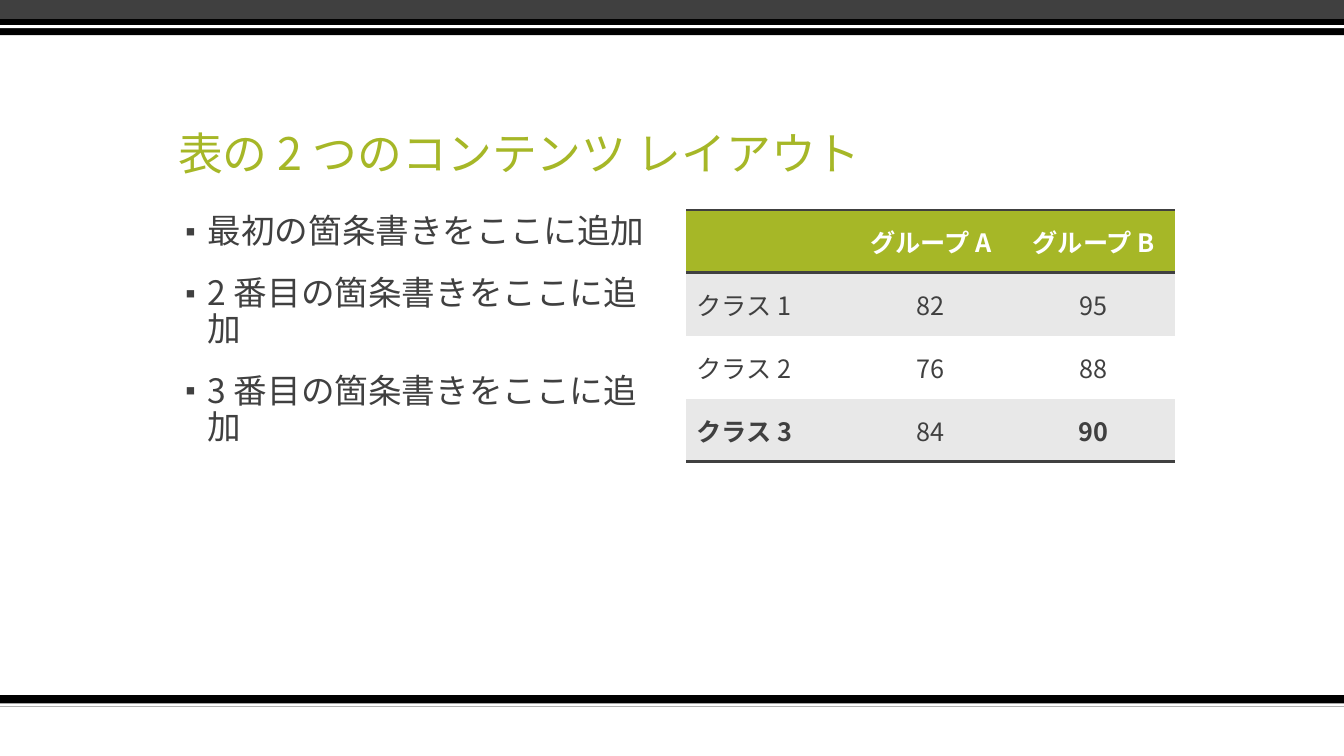
import dataclasses

import lxml.etree
import pptx
import pptx.dml.color
import pptx.enum.lang
import pptx.enum.shapes
import pptx.enum.text
import pptx.oxml.ns
import pptx.util

Pt = pptx.util.Pt
qn = pptx.oxml.ns.qn
ALIGN = pptx.enum.text.PP_ALIGN
ANCHOR = pptx.enum.text.MSO_ANCHOR

FONT = "Noto Sans CJK JP"
GREEN, DARK, BLACK, WHITE, BAND = "A6B727", "404040", "000000", "FFFFFF", "E8E8E8"
NO_STYLE = "{2D5ABB26-0587-4C30-8999-92F81FD0307C}"
SLIDE_W, SLIDE_H = 960, 540
CONTENT_TOP, CONTENT_W = 149.8, 349.2
ROW_H = 45


@dataclasses.dataclass
class Bar:
    top: float
    height: float
    color: str


@dataclasses.dataclass
class Row:
    cells: tuple[str, ...]
    fill: str
    color: str = DARK
    bold: tuple[int, ...] = ()
    edges: tuple[str, ...] = ()


BARS = [
    Bar(496.6, 7.9, BLACK),
    Bar(502.4, 2.1, WHITE),
    Bar(0, 13.6, DARK),
    Bar(13.6, 11.5, BLACK),
    Bar(18, 2.1, WHITE),
]
BULLETS = [
    "最初の箇条書きをここに追加",
    "2 番目の箇条書きをここに追加",
    "3 番目の箇条書きをここに追加",
]
ROWS = [
    Row(("", "グループ A", "グループ B"), GREEN, WHITE, (0, 1, 2), ("lnT", "lnB")),
    Row(("クラス 1", "82", "95"), BAND),
    Row(("クラス 2", "76", "88"), WHITE),
    Row(("クラス 3", "84", "90"), BAND, DARK, (0, 2), ("lnB",)),
]


def rgb(color: str) -> pptx.dml.color.RGBColor:
    return pptx.dml.color.RGBColor.from_string(color)


def paint(fill, color: str) -> None:
    fill.solid()
    fill.fore_color.rgb = rgb(color)


def add_child(parent, tag: str, **attrs: str):
    return lxml.etree.SubElement(parent, qn(tag), attrs)


def write(p, text: str, *, size: float, color: str, bold: bool = False,
          align=ALIGN.LEFT) -> None:
    p.alignment = align
    r = p.add_run()
    r.text = text
    r.font.size = Pt(size)
    r.font.bold = bold
    r.font.name = FONT
    r.font.language_id = pptx.enum.lang.MSO_LANGUAGE_ID.JAPANESE
    paint(r.font.fill, color)
    add_child(r.font._element, "a:ea", typeface=FONT)


def place(sp, left: float, top: float, width: float, height: float, anchor):
    sp.left, sp.top, sp.width, sp.height = Pt(left), Pt(top), Pt(width), Pt(height)
    tf = sp.text_frame
    tf.word_wrap = True
    tf.auto_size = pptx.enum.text.MSO_AUTO_SIZE.NONE
    tf.vertical_anchor = anchor
    return tf


def add_bar(s, bar: Bar) -> None:
    sp = s.shapes.add_shape(pptx.enum.shapes.MSO_SHAPE.RECTANGLE,
                            0, Pt(bar.top), Pt(SLIDE_W), Pt(bar.height))
    sp.shadow.inherit = False
    paint(sp.fill, bar.color)
    sp.line.fill.background()


def add_bullet(p, text: str) -> None:
    p.line_spacing = 0.9
    p.space_before = Pt(18)
    write(p, text, size=24, color=DARK)
    pPr = p._p.get_or_add_pPr()
    pPr.set("marL", str(Pt(21.6)))
    pPr.set("indent", str(-Pt(21.6)))
    add_child(add_child(pPr, "a:buClr"), "a:srgbClr", val=DARK)
    add_child(pPr, "a:buSzPct", val="80000")
    add_child(pPr, "a:buFont", typeface=FONT)
    add_child(pPr, "a:buChar", char="▪")


def add_edge(cell, edge: str) -> None:
    ln = add_child(cell._tc.get_or_add_tcPr(), f"a:{edge}", w=str(Pt(2)))
    add_child(add_child(ln, "a:solidFill"), "a:srgbClr", val=DARK)


def add_scores(s) -> None:
    columns = len(ROWS[0].cells)
    table = s.shapes.add_table(len(ROWS), columns, Pt(490.3), Pt(CONTENT_TOP),
                               Pt(CONTENT_W), Pt(ROW_H * len(ROWS))).table
    table._tbl.tblPr.find(qn("a:tableStyleId")).text = NO_STYLE
    for column in table.columns:
        column.width = Pt(CONTENT_W / columns)
    for i, row in enumerate(ROWS):
        table.rows[i].height = Pt(ROW_H)
        for j, text in enumerate(row.cells):
            cell = table.cell(i, j)
            cell.vertical_anchor = ANCHOR.MIDDLE
            for edge in row.edges:
                add_edge(cell, edge)
            paint(cell.fill, row.fill)
            if text:
                write(cell.text_frame.paragraphs[0], text, size=18, color=row.color,
                      bold=j in row.bold, align=ALIGN.CENTER if j else ALIGN.LEFT)


def main() -> None:
    prs = pptx.Presentation()
    prs.slide_width, prs.slide_height = Pt(SLIDE_W), Pt(SLIDE_H)
    s = prs.slides.add_slide(prs.slide_layouts[1])
    paint(s.background.fill, WHITE)
    for bar in BARS:
        add_bar(s, bar)

    tf = place(s.shapes.title, 120, 48, 720, 84, ANCHOR.BOTTOM)
    tf.paragraphs[0].line_spacing = 0.9
    write(tf.paragraphs[0], "表の 2 つのコンテンツ レイアウト", size=32, color=GREEN)

    tf = place(s.placeholders[1], 119.5, CONTENT_TOP, CONTENT_W, 321.8, ANCHOR.TOP)
    for i, text in enumerate(BULLETS):
        add_bullet(tf.add_paragraph() if i else tf.paragraphs[0], text)

    add_scores(s)
    prs.save("out.pptx")


if __name__ == "__main__":
    main()
